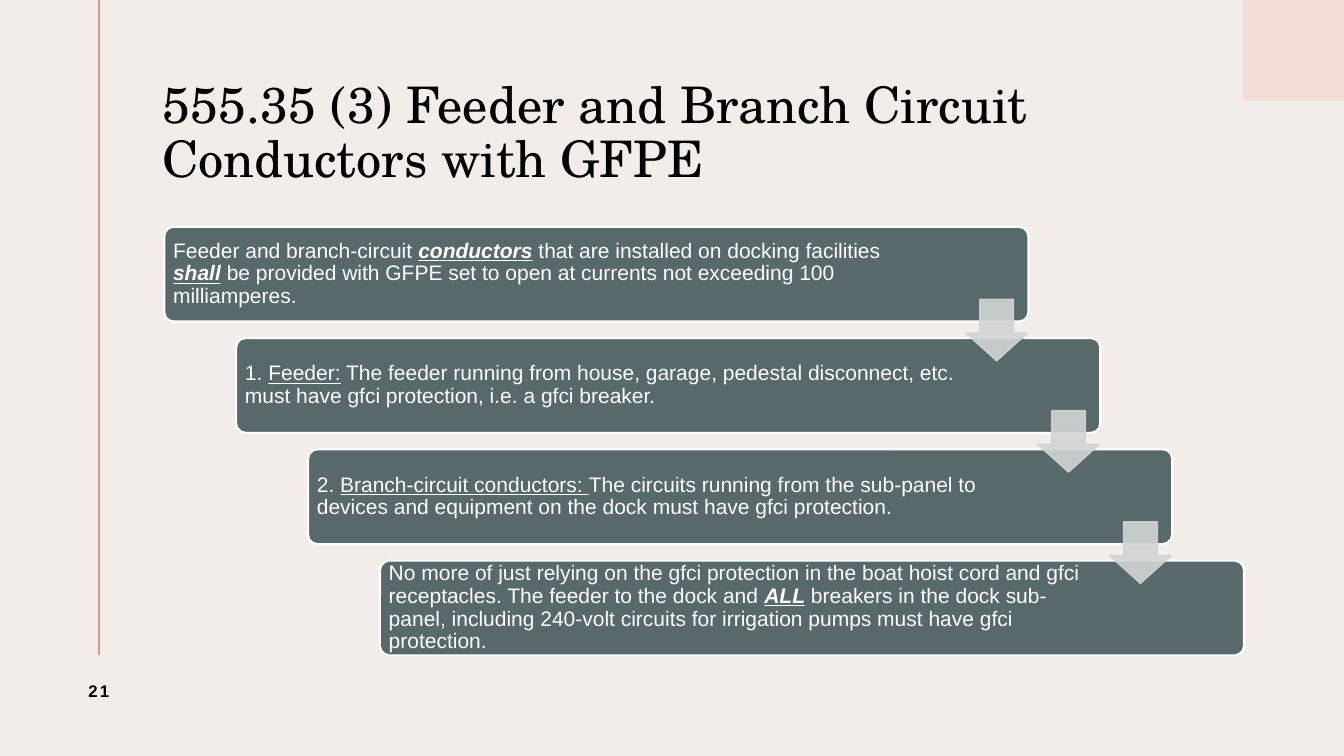
from lxml.etree import SubElement
from pptx import Presentation
from pptx.dml.color import RGBColor
from pptx.enum.shapes import MSO_CONNECTOR, MSO_SHAPE as Preset
from pptx.enum.text import MSO_ANCHOR as Anchor, PP_ALIGN as Align
from pptx.oxml.ns import qn
from pptx.util import Inches, Pt

CREAM = RGBColor(0xF3, 0xED, 0xEA)
PINK = RGBColor(0xF4, 0xDD, 0xD8)
CORAL = RGBColor(0xDF, 0x99, 0x8B)
SLATE = RGBColor(0x58, 0x69, 0x6B)
SILVER = RGBColor(0xD1, 0xD4, 0xD4)
WHITE = RGBColor(0xFF, 0xFF, 0xFF)
BLACK = RGBColor(0, 0, 0)

HEADING_FONT = "TeX Gyre Schola"
BODY_FONT = "Arial"

STEP_LEFT, STEP_TOP = 1.63, 2.25
STEP_WIDTH, STEP_HEIGHT = 8.57, 0.94
SHIFT_X, SHIFT_Y = 0.713, 1.104
ARROW_LEFT, ARROW_TOP, ARROW_SIZE = 9.58, 2.97, 0.61

STEPS = [
    (1.1, [("Feeder and branch-circuit ", ""), ("conductors", "biu"),
           (" that are installed on docking facilities ", ""), ("shall", "biu"),
           (" be provided with GFPE set to open at currents not exceeding "
            "100 milliamperes.", "")]),
    (1.38, [("1. ", ""), ("Feeder:", "u"),
            (" The feeder running from house, garage, pedestal disconnect, etc. "
             "must have gfci protection, i.e. a gfci breaker.", "")]),
    (1.38, [("2. ", ""), ("Branch-circuit conductors: ", "u"),
            ("The circuits running from the sub-panel to devices and equipment "
             "on the dock must have gfci protection.", "")]),
    (1.38, [("No more of just relying on the gfci protection in the boat hoist "
             "cord and gfci receptacles. The feeder to the dock and ", ""),
            ("ALL", "biu"),
            (" breakers in the dock sub-panel, including 240-volt circuits for "
             "irrigation pumps must have gfci protection.", "")]),
]


def add_run(paragraph, text, font_name, size, color, style=""):
    run = paragraph.add_run()
    run.text = text
    run.font.name = font_name
    run.font.size = Pt(size)
    run.font.color.rgb = color
    run.font.bold = "b" in style
    run.font.italic = "i" in style
    run.font.underline = "u" in style
    return run


def set_frame(frame, left, top, right, bottom):
    frame.word_wrap = True
    frame.vertical_anchor = Anchor.MIDDLE
    frame.margin_left, frame.margin_top = Inches(left), Inches(top)
    frame.margin_right, frame.margin_bottom = Inches(right), Inches(bottom)
    return frame.paragraphs[0]


def add_block(slide, preset, left, top, width, height, fill):
    block = slide.shapes.add_shape(
        preset, Inches(left), Inches(top), Inches(width), Inches(height))
    block.shadow.inherit = False
    block.fill.solid()
    block.fill.fore_color.rgb = fill
    return block


def add_outline(block, color, width):
    block.line.color.rgb = color
    block.line.width = Pt(width)


def add_decoration(slide):
    corner = add_block(slide, Preset.RECTANGLE, 12.33, 0, 1, 1, PINK)
    corner.line.fill.background()
    rule = slide.shapes.add_connector(
        MSO_CONNECTOR.STRAIGHT, Inches(0.98), 0, Inches(0.98), Inches(6.5))
    add_outline(rule, CORAL, 1.5)
    SubElement(rule.line._get_or_add_ln().getparent(), qn("a:effectLst"))


def add_title(slide, text):
    title = slide.shapes.add_textbox(
        Inches(1.61), Inches(0.55), Inches(10.73), Inches(1.56))
    paragraph = set_frame(title.text_frame, 0, 0.05, 0.1, 0.05)
    paragraph.line_spacing = 0.9
    add_run(paragraph, text, HEADING_FONT, 36, BLACK)


def add_page_number(slide, text):
    number = slide.shapes.add_textbox(
        Inches(0.45), Inches(6.5), Inches(1.06), Inches(0.71))
    paragraph = set_frame(number.text_frame, 0.1, 0.05, 0.1, 0.05)
    paragraph.alignment = Align.CENTER
    paragraph.space_after = Pt(6)
    run = add_run(paragraph, text, BODY_FONT, 12, BLACK, "b")
    run.font._element.set("spc", "150")


def add_step(slide, index, right_margin, pieces):
    step = add_block(slide, Preset.ROUNDED_RECTANGLE,
                     STEP_LEFT + index * SHIFT_X, STEP_TOP + index * SHIFT_Y,
                     STEP_WIDTH, STEP_HEIGHT, SLATE)
    step.adjustments[0] = 0.1
    add_outline(step, WHITE, 1.5)
    paragraph = set_frame(step.text_frame, 0.06, 0.06, right_margin, 0.06)
    paragraph.alignment = Align.LEFT
    paragraph.line_spacing = 0.9
    for text, style in pieces:
        add_run(paragraph, text, BODY_FONT, 15, WHITE, style)


def add_arrow(slide, index):
    arrow = add_block(slide, Preset.DOWN_ARROW,
                      ARROW_LEFT + index * SHIFT_X, ARROW_TOP + index * SHIFT_Y,
                      ARROW_SIZE, ARROW_SIZE, SILVER)
    arrow.adjustments[0] = 0.55
    arrow.adjustments[1] = 0.45
    add_outline(arrow, SILVER, 1)
    for color in arrow._element.spPr.iter(qn("a:srgbClr")):
        SubElement(color, qn("a:alpha"), val="90000")


def main():
    deck = Presentation()
    deck.slide_width, deck.slide_height = Inches(13.33), Inches(7.5)
    slide = deck.slides.add_slide(deck.slide_layouts[6])
    slide.background.fill.solid()
    slide.background.fill.fore_color.rgb = CREAM
    add_decoration(slide)
    add_title(slide, "555.35 (3) Feeder and Branch Circuit Conductors with GFPE")
    add_page_number(slide, "21")
    for index, (right_margin, pieces) in enumerate(STEPS):
        add_step(slide, index, right_margin, pieces)
    for index in range(len(STEPS) - 1):
        add_arrow(slide, index)
    deck.save("out.pptx")


if __name__ == "__main__":
    main()
